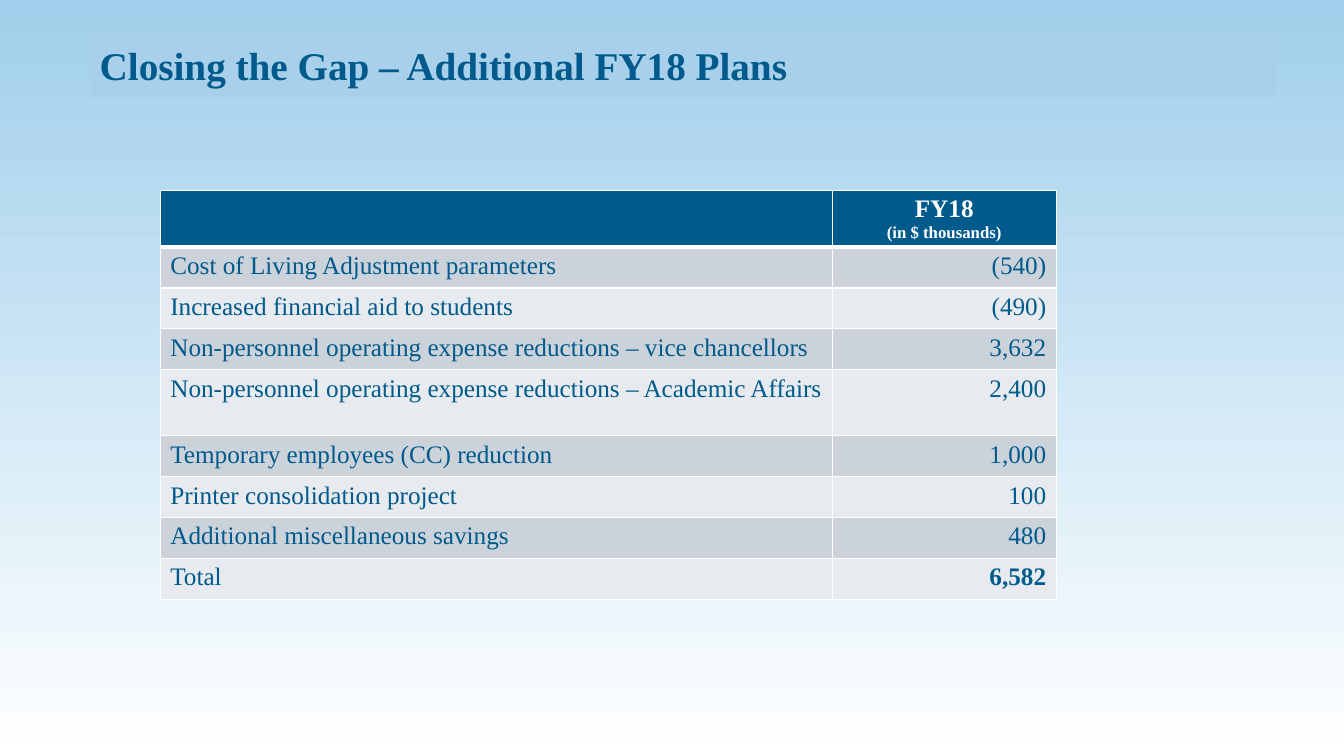
import pptx
import pptx.dml.color
import pptx.enum.text
import pptx.oxml
import pptx.oxml.ns
import pptx.util

Pt = pptx.util.Pt
ALIGN = pptx.enum.text.PP_ALIGN
FONT = "Times New Roman"
COLORS = {
    "sky": "A0CFEB",
    "title_band": "A9D0EA",
    "navy": "005A8B",
    "dark_band": "CCD2DA",
    "light_band": "E7EAEE",
    "white": "FFFFFF",
}
PLANS = [
    ("Cost of Living Adjustment parameters", "(540)"),
    ("Increased financial aid to students", "(490)"),
    ("Non-personnel operating expense reductions – vice chancellors", "3,632"),
    ("Non-personnel operating expense reductions – Academic Affairs", "2,400"),
    ("Temporary employees (CC) reduction", "1,000"),
    ("Printer consolidation project", "100"),
    ("Additional miscellaneous savings", "480"),
    ("Total", "6,582"),
]
HEADER_HEIGHT, ROW_HEIGHT, WRAPPED_HEIGHT = 40.4, 29.2, 47.1
WRAPPED_ROW = 4


def rgb(name):
    """Return the named colour."""
    return pptx.dml.color.RGBColor.from_string(COLORS[name])


def add_span(para, text, size, color, bold=False):
    """Add one formatted run to a paragraph."""
    span = para.add_run()
    span.text = text
    span.font.name = FONT
    span.font.size = Pt(size)
    span.font.bold = bold
    span.font.color.rgb = rgb(color)


def paint_background(page):
    """Fill the page from sky blue at the top to white at the bottom."""
    fill = page.background.fill
    fill.gradient()
    fill.gradient_angle = 270
    for stop, name, position in zip(fill.gradient_stops, ("sky", "white"), (0, 1)):
        stop.color.rgb = rgb(name)
        stop.position = position


def place_title(page, left, top, width, height):
    """Place the title on its pale band."""
    title = page.shapes.title
    title.left, title.top, title.width, title.height = map(Pt, (left, top, width, height))
    title.fill.solid()
    title.fill.fore_color.rgb = rgb("title_band")
    frame = title.text_frame
    frame.word_wrap = True
    frame.auto_size = pptx.enum.text.MSO_AUTO_SIZE.NONE
    frame.vertical_anchor = pptx.enum.text.MSO_ANCHOR.MIDDLE
    para = frame.paragraphs[0]
    para.alignment = ALIGN.LEFT
    add_span(para, "Closing the Gap – Additional FY18 Plans", 28, "navy", True)


def style_cell(cell, fill, bottom=1):
    """Fill a cell and rule its four sides in white."""
    cell.fill.solid()
    cell.fill.fore_color.rgb = rgb(fill)
    properties = cell._tc.get_or_add_tcPr()
    for index, (side, weight) in enumerate(zip("LRTB", (1, 1, 1, bottom))):
        properties.insert(index, pptx.oxml.parse_xml(
            f'<a:ln{side} {pptx.oxml.ns.nsdecls("a")} w="{Pt(weight)}"><a:solidFill>'
            f'<a:srgbClr val="{COLORS["white"]}"/></a:solidFill></a:ln{side}>'))


def place_table(page, left, top, width, height):
    """Place the table of plans with its header and total."""
    table = page.shapes.add_table(
        len(PLANS) + 1, 2, Pt(left), Pt(top), Pt(width), Pt(height)).table
    table.first_row = table.horz_banding = False
    table.columns[0].width = Pt(width * 0.75)
    table.columns[1].width = Pt(width * 0.25)
    for row in table.rows:
        row.height = Pt(ROW_HEIGHT)
    table.rows[0].height = Pt(HEADER_HEIGHT)
    table.rows[WRAPPED_ROW].height = Pt(WRAPPED_HEIGHT)

    for column in range(2):
        style_cell(table.cell(0, column), "navy", bottom=3)
    frame = table.cell(0, 1).text_frame
    unit = frame.add_paragraph()
    for para, text, size in ((frame.paragraphs[0], "FY18", 18), (unit, "(in $ thousands)", 12)):
        para.alignment = ALIGN.CENTER
        add_span(para, text, size, "white", True)

    for index, plan in enumerate(PLANS, 1):
        for column, text in enumerate(plan):
            cell = table.cell(index, column)
            style_cell(cell, "dark_band" if index % 2 else "light_band")
            para = cell.text_frame.paragraphs[0]
            para.alignment = ALIGN.RIGHT if column else ALIGN.LEFT
            add_span(para, text, 18, "navy", bold=column == 1 and index == len(PLANS))


def main():
    """Build the deck and save it."""
    deck = pptx.Presentation()
    deck.slide_width, deck.slide_height = Pt(960), Pt(540)
    page = deck.slides.add_slide(deck.slide_layouts[5])
    paint_background(page)
    place_title(page, 64, 23.5, 848, 46)
    place_table(page, 114.5, 136, 640, 292)
    deck.save("out.pptx")


if __name__ == "__main__":
    main()
